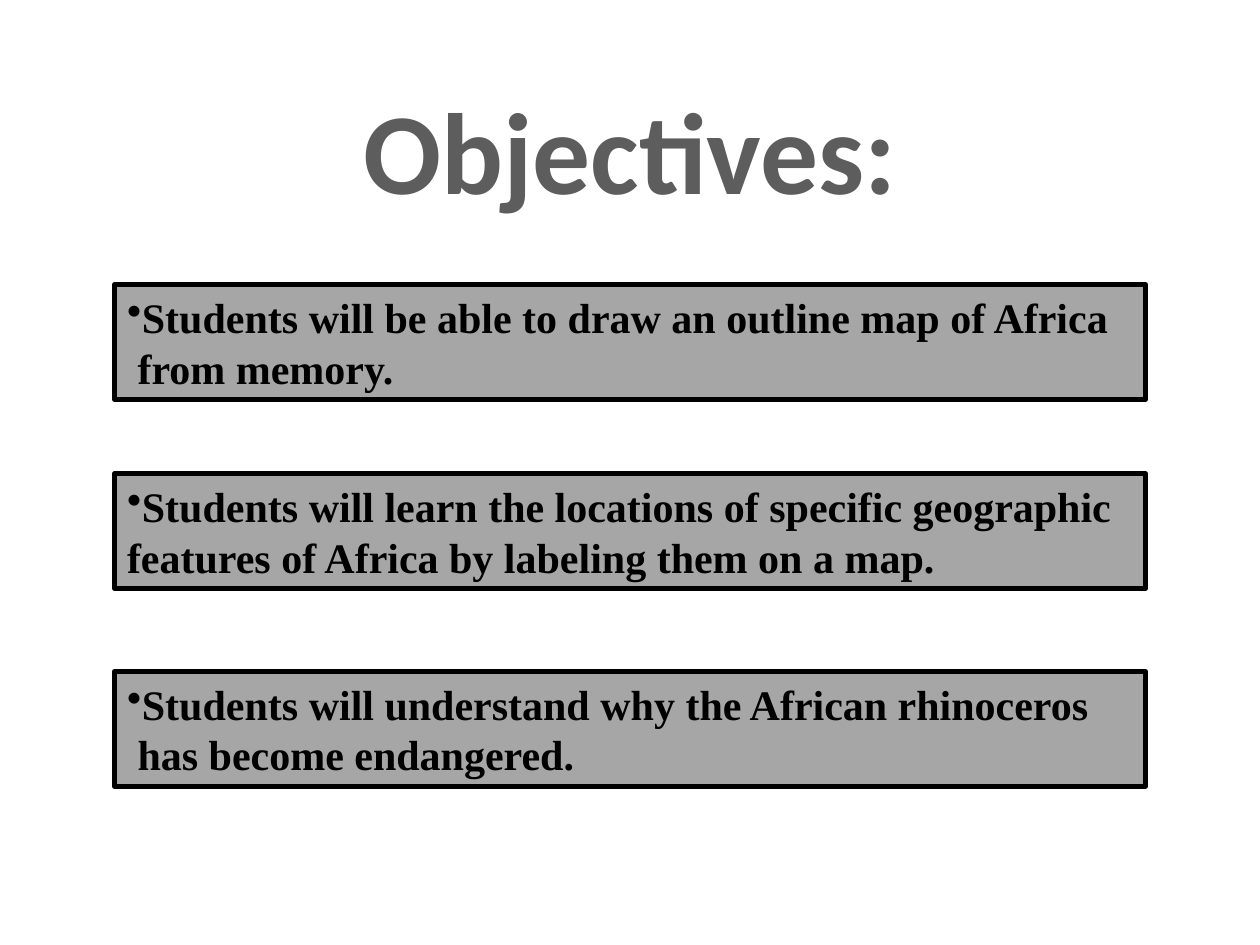
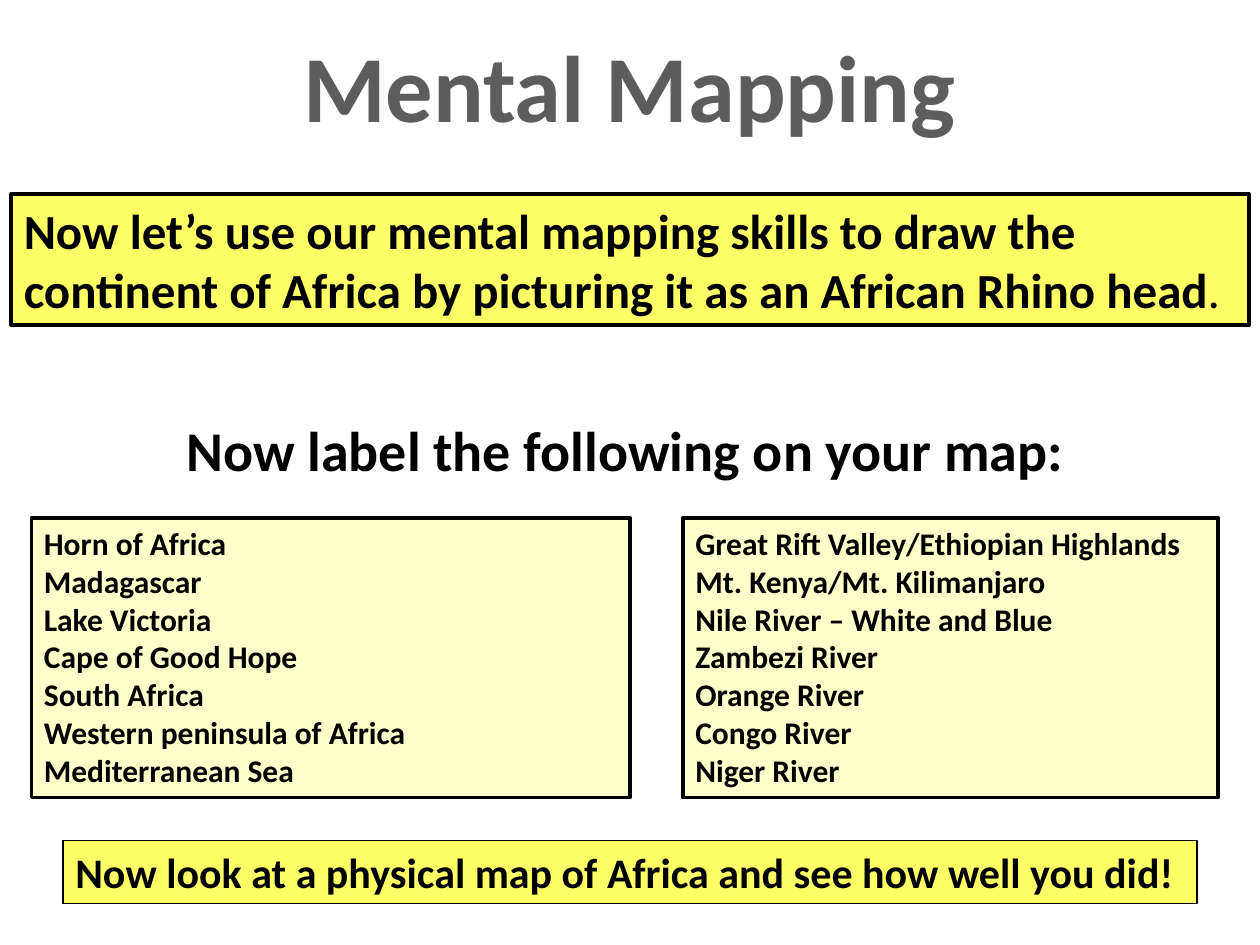
from dataclasses import dataclass

from lxml import etree
from pptx import Presentation
from pptx.dml.color import RGBColor
from pptx.enum.shapes import MSO_SHAPE
from pptx.enum.text import MSO_ANCHOR, PP_ALIGN
from pptx.oxml.ns import qn
from pptx.util import Inches, Pt

RECT = MSO_SHAPE.RECTANGLE
TOP, MIDDLE = MSO_ANCHOR.TOP, MSO_ANCHOR.MIDDLE
LEFT, CENTER = PP_ALIGN.LEFT, PP_ALIGN.CENTER
WIDTH, HEIGHT = Inches(10), Inches(7.5)
COLS, ROWS = 100, 75


@dataclass(frozen=True)
class Theme:
    """Colours, fonts, type sizes and line widths of the deck."""
    title: str = "5D5D5D"
    ink: str = "000000"
    gray: str = "A6A6A6"
    yellow: str = "FFFF66"
    cream: str = "FFFFCC"
    sans: str = "Calibri"
    serif: str = "Times New Roman"
    cover_size: int = 66
    title_size: int = 54
    label_size: int = 32
    lead_size: int = 28
    body_size: int = 24
    list_size: int = 18
    heavy: float = 3
    medium: float = 2.25
    thin: float = 0.75


THEME = Theme()


@dataclass(frozen=True)
class Box:
    """A rectangle in grid columns and rows."""
    x: float
    y: float
    w: float
    h: float

    def emu(self):
        """Return left, top, width and height in slide units."""
        cw, rh = WIDTH / COLS, HEIGHT / ROWS
        return [round(v) for v in (self.x * cw, self.y * rh, self.w * cw, self.h * rh)]


def write(tf, lines, size, font=THEME.sans, color=THEME.ink, align=LEFT, anchor=TOP):
    """Fill a text frame with one bold paragraph per line."""
    tf.word_wrap = True
    tf.vertical_anchor = anchor
    for i, line in enumerate(lines):
        p = tf.add_paragraph() if i else tf.paragraphs[0]
        p.text = line
        p.alignment = align
        for r in p.runs:
            r.font.name, r.font.size, r.font.bold = font, Pt(size), True
            r.font.color.rgb = RGBColor.from_string(color)


def add_label(slide, box, text, size, color=THEME.ink, align=LEFT):
    """Place a line of text without a frame."""
    tf = slide.shapes.add_textbox(*box.emu()).text_frame
    write(tf, [text], size, color=color, align=align)


def add_panel(slide, box, lines, size, fill, line, **style):
    """Place a filled, outlined rectangle and return its text frame."""
    sp = slide.shapes.add_shape(RECT, *box.emu())
    sp.shadow.inherit = False
    sp.fill.solid()
    sp.fill.fore_color.rgb = RGBColor.from_string(fill)
    sp.line.color.rgb = RGBColor.from_string(THEME.ink)
    sp.line.width = Pt(line)
    write(sp.text_frame, lines, size, **style)
    return sp.text_frame


def add_objective(slide, box, lines, indent):
    """Place an objective with a bullet and an optionally indented second line."""
    tf = add_panel(slide, box, lines, THEME.body_size, THEME.gray, THEME.heavy,
                   font=THEME.serif, anchor=MIDDLE)
    first, second = tf.paragraphs
    etree.SubElement(first._p.get_or_add_pPr(), qn("a:buChar")).set("char", "•")
    second._p.get_or_add_pPr().set("marL", str(Pt(indent)))


def add_places(slide, box, columns, widths):
    """Place the lists of places at the two sides of the box."""
    lefts = box.x, box.x + box.w - widths[1]
    for x, w, places in zip(lefts, widths, columns):
        add_panel(slide, Box(x, box.y, w, box.h), places,
                  THEME.list_size, THEME.cream, THEME.medium)


def objectives_slide(slide, box):
    """Build the slide of objectives."""
    add_label(slide, Box(box.x + 27.6, box.y + 5.8, 44.8, 12.1), "Objectives:",
              THEME.cover_size, THEME.title, CENTER)
    objectives = [
        (22.6, 6, ["Students will be able to draw an outline map of Africa",
                   "from memory."]),
        (37.6, 0, ["Students will learn the locations of specific geographic",
                   "features of Africa by labeling them on a map."]),
        (53.3, 6, ["Students will understand why the African rhinoceros",
                   "has become endangered."]),
    ]
    for top, indent, lines in objectives:
        add_objective(slide, Box(box.x + 9.1, box.y + top, 81.8, 9.1), lines, indent)


def mapping_slide(slide, box):
    """Build the mental mapping slide."""
    add_label(slide, Box(box.x + 22.8, box.y + 1.7, 54.3, 10.1), "Mental Mapping",
              THEME.title_size, THEME.title, CENTER)
    tf = add_panel(slide, Box(box.x + 0.9, box.y + 15.4, 98.2, 10.4),
                   ["Now let’s use our mental mapping skills to draw the",
                    "continent of Africa by picturing it as an African Rhino head"],
                   THEME.lead_size, THEME.yellow, THEME.medium)
    r = tf.paragraphs[-1].add_run()
    r.text = "."
    r.font.name, r.font.size, r.font.bold = THEME.sans, Pt(THEME.lead_size), False
    r.font.color.rgb = RGBColor.from_string(THEME.ink)
    add_label(slide, Box(box.x + 13.8, box.y + 32.5, 72.3, 6.4),
              "Now label the following on your map:", THEME.label_size)
    columns = [
        ["Horn of Africa", "Madagascar", "Lake Victoria", "Cape of Good Hope",
         "South Africa", "Western peninsula of Africa", "Mediterranean Sea"],
        ["Great Rift Valley/Ethiopian Highlands", "Mt. Kenya/Mt. Kilimanjaro",
         "Nile River – White and Blue", "Zambezi River", "Orange River",
         "Congo River", "Niger River"],
    ]
    add_places(slide, Box(box.x + 2.5, box.y + 41.1, 94.2, 22.2), columns, (47.5, 42.5))
    add_panel(slide, Box(box.x + 5, box.y + 66.7, 90, 5),
              ["Now look at a physical map of Africa and see how well you did!"],
              THEME.body_size, THEME.yellow, THEME.thin)


def main():
    """Build and save the deck."""
    prs = Presentation()
    prs.slide_width, prs.slide_height = WIDTH, HEIGHT
    blank = prs.slide_layouts[6]
    for build in (objectives_slide, mapping_slide):
        build(prs.slides.add_slide(blank), Box(0, 0, COLS, ROWS))
    prs.save("out.pptx")


if __name__ == "__main__":
    main()
